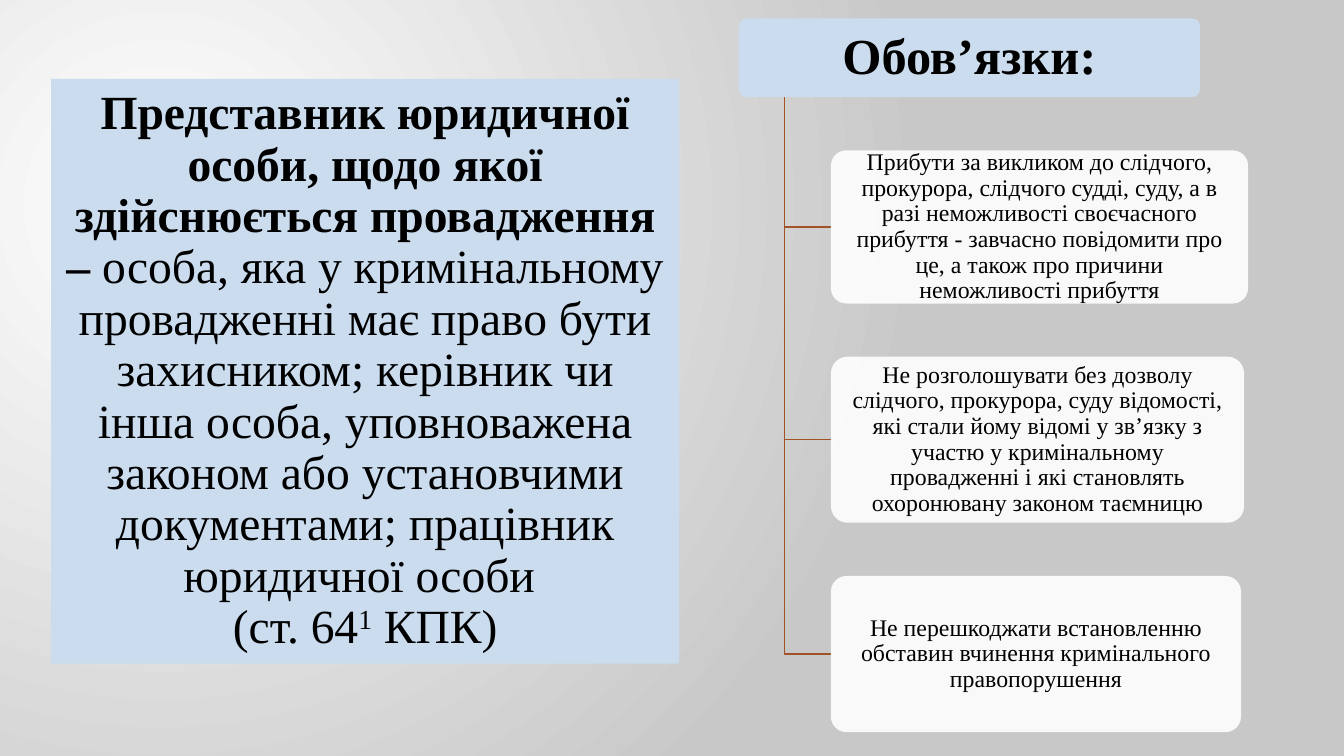
from lxml import etree
from pptx import Presentation
from pptx.dml.color import RGBColor
from pptx.enum.shapes import MSO_SHAPE
from pptx.enum.text import MSO_ANCHOR, MSO_AUTO_SIZE, PP_ALIGN
from pptx.oxml.ns import qn
from pptx.util import Pt

ROUND = MSO_SHAPE.ROUNDED_RECTANGLE
MIDDLE, CENTER, NO_FIT = MSO_ANCHOR.MIDDLE, PP_ALIGN.CENTER, MSO_AUTO_SIZE.NONE

COLORS = {"panel": "CADCEE", "duty": "FFFFFF", "line": "A15227",
          "text": "000000", "bg_in": "FFFFFF", "bg_out": "C8C8C8"}
FONT = "Times New Roman"

# Runs: text, bold, superscript; "\n" inside a run is a line break
DEFINITION = [
    ("Представник юридичної особи, щодо якої здійснюється провадження – ", True, False),
    ("особа, яка у кримінальному провадженні має право бути захисником; "
     "керівник чи інша особа, уповноважена законом або установчими документами; "
     "працівник юридичної особи \n(ст. 64", False, False),
    ("1", False, True),
    (" КПК)", False, False),
]
HEADING = [("Обов’язки:", True, False)]
# Duties: text, width, height
DUTIES = [
    ("Прибути за викликом до слідчого, прокурора, слідчого судді, суду, а в разі "
     "неможливості своєчасного прибуття - завчасно повідомити про це, а також про "
     "причини неможливості прибуття", 298, 109.4),
    ("Не розголошувати без дозволу слідчого, прокурора, суду відомості, які стали йому "
     "відомі у зв’язку з участю у кримінальному провадженні і які становлять "
     "охоронювану законом таємницю", 295.2, 118.6),
    ("Не перешкоджати встановленню обставин вчинення кримінального правопорушення",
     293, 111.6),
]

PANEL_BOX = (36.6, 56.4, 448.6, 417.6)
HEAD_BOX = (527.6, 13.2, 329.6, 56.2)
GAP = 38


def rgb(name):
    return RGBColor.from_string(COLORS[name])


def place(sp, box):
    for name, value in zip(("left", "top", "width", "height"), box):
        setattr(sp, name, Pt(value))


def write(sp, runs, size, pad_x, pad_y):
    tf = sp.text_frame
    layout = {"word_wrap": True, "auto_size": NO_FIT, "vertical_anchor": MIDDLE,
              "margin_left": Pt(pad_x), "margin_right": Pt(pad_x),
              "margin_top": Pt(pad_y), "margin_bottom": Pt(pad_y)}
    for name, value in layout.items():
        setattr(tf, name, value)
    p = tf.paragraphs[0]
    for name, value in {"alignment": CENTER, "line_spacing": 0.9,
                        "space_before": Pt(0)}.items():
        setattr(p, name, value)
    for text, bold, raised in runs:
        for i, line in enumerate(text.split("\n")):
            if i:
                p.add_line_break()
            r = p.add_run()
            r.text = line
            for name, value in {"name": FONT, "size": Pt(size), "bold": bold}.items():
                setattr(r.font, name, value)
            r.font.color.rgb = rgb("text")
            if raised:
                r.font._element.set("baseline", "30000")
    return p


def add_round_box(slide, box, color):
    sp = slide.shapes.add_shape(ROUND, *map(Pt, box))
    sp.adjustments[0] = 0.1
    sp.shadow.inherit = False
    sp.fill.solid()
    sp.fill.fore_color.rgb = rgb(color)
    sp.line.fill.background()
    return sp


def add_branch(slide, x, top, right, bottom):
    """Draw an elbow line down from the heading and across to a duty."""
    builder = slide.shapes.build_freeform(Pt(x), Pt(top))
    builder.add_line_segments([(Pt(x), Pt(bottom)), (Pt(right), Pt(bottom))], close=False)
    sp = builder.convert_to_shape()
    sp.shadow.inherit = False
    sp.fill.background()
    sp.line.color.rgb = rgb("line")
    sp.line.width = Pt(1)


def paint_background(slide):
    fill = slide.background.fill
    fill.gradient()
    for stop, position, name in zip(fill.gradient_stops, (0, 1), ("bg_in", "bg_out")):
        stop.position = position
        stop.color.rgb = rgb(name)
    grad = next(slide.element.iter(qn("a:gradFill")))
    grad.remove(grad.find(qn("a:lin")))
    circle = etree.SubElement(grad, qn("a:path"), {"path": "circle"})
    etree.SubElement(circle, qn("a:fillToRect"),
                     {"l": "50000", "t": "55000", "r": "125000", "b": "100000"})


def main():
    prs = Presentation()
    prs.slide_width, prs.slide_height = Pt(960), Pt(540)
    slide = prs.slides.add_slide(prs.slide_layouts[1])
    paint_background(slide)
    title, panel = slide.placeholders

    place(panel, PANEL_BOX)
    panel.fill.solid()
    panel.fill.fore_color.rgb = rgb("panel")
    p_pr = write(panel, DEFINITION, 34, 10, 10)._p.get_or_add_pPr()
    for name in ("marL", "indent"):
        p_pr.set(name, "0")
    etree.SubElement(p_pr, qn("a:buNone"))

    left, top, width, height = HEAD_BOX
    head = add_round_box(slide, HEAD_BOX, "panel")
    head.element.addnext(title.element)
    place(title, HEAD_BOX)
    write(title, HEADING, 36, 6.5, 5)

    trunk_x, duty_x = left + width * 0.1, left + width * 0.2
    head_bottom = top + height
    y = head_bottom + GAP
    for text, w, h in DUTIES:
        add_branch(slide, trunk_x, head_bottom, duty_x, y + h / 2)
        duty = add_round_box(slide, (duty_x, y, w, h), "duty")
        color = next(duty.element.spPr.iter(qn("a:srgbClr")))
        etree.SubElement(color, qn("a:alpha"), {"val": "90000"})
        write(duty, [(text, False, False)], 17, 6, 5)
        y += h + GAP

    prs.save("out.pptx")


if __name__ == "__main__":
    main()
